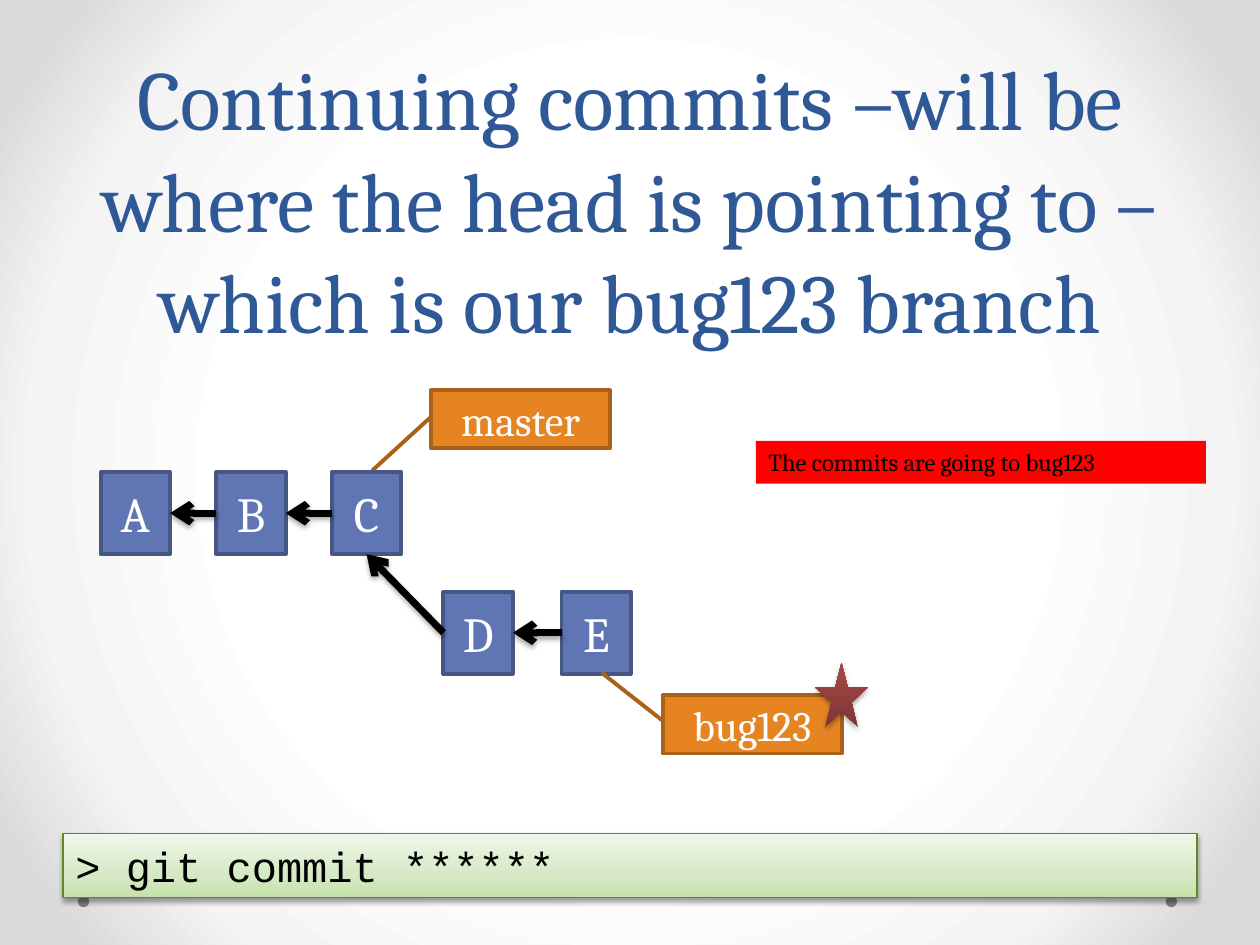
from pptx import Presentation
from pptx.dml.color import RGBColor
from pptx.enum.shapes import MSO_CONNECTOR, MSO_SHAPE
from pptx.enum.text import MSO_ANCHOR, MSO_AUTO_SIZE, PP_ALIGN
from pptx.oxml.ns import qn
from pptx.util import Cm, Pt
from lxml.etree import SubElement

SERIF, MONO = "Cambria", "Courier New"
TOP, LEFT, BOTTOM, RIGHT = range(4)


def rgb(color):
    """Turn a hex string into a colour."""
    return RGBColor.from_string(color)


def write(shape, text, font, size, color, align=PP_ALIGN.CENTER, anchor=MSO_ANCHOR.MIDDLE):
    """Set and format the single paragraph of a shape."""
    frame = shape.text_frame
    frame.text = text
    frame.word_wrap = True
    frame.auto_size = MSO_AUTO_SIZE.NONE
    frame.vertical_anchor = anchor
    paragraph = frame.paragraphs[0]
    paragraph.alignment = align
    face = paragraph.runs[0].font
    face.name, face.size = font, Pt(size)
    face.color.rgb = rgb(color)
    return paragraph


def add_box(slide, kind, box, fill=None, line=None, width=2.25):
    """Add a preset shape with a plain fill and outline."""
    shape = slide.shapes.add_shape(kind, *map(Cm, box))
    shape.shadow.inherit = False
    if fill:
        shape.fill.solid()
        shape.fill.fore_color.rgb = rgb(fill)
    if line:
        shape.line.color.rgb = rgb(line)
        shape.line.width = Pt(width)
    else:
        shape.line.fill.background()
    return shape


def set_gradient(fill, element, stops, circular=False):
    """Fill with a gradient running upwards or out from the centre."""
    fill.gradient()
    gradient = element.find(".//" + qn("a:gradFill"))
    for child in list(gradient):
        gradient.remove(child)
    stop_list = SubElement(gradient, qn("a:gsLst"))
    for percent, color in stops:
        stop = SubElement(stop_list, qn("a:gs"), pos=str(percent * 1000))
        SubElement(stop, qn("a:srgbClr"), val=color)
    if circular:
        spread = SubElement(gradient, qn("a:path"), path="circle")
        SubElement(spread, qn("a:fillToRect"), dict.fromkeys("ltrb", "50000"))
    else:
        SubElement(gradient, qn("a:lin"), ang="16200000", scaled="0")


def add_shadow(shape, distance=1.8, opacity=35):
    """Drop a soft black shadow below a shape or connector."""
    properties = shape._element.spPr
    effects = properties.find(qn("a:effectLst"))
    if effects is None:
        effects = SubElement(properties, qn("a:effectLst"))
    shadow = SubElement(effects, qn("a:outerShdw"), blurRad=str(Pt(3.1)),
                        dist=str(Pt(distance)), dir="5400000", rotWithShape="0")
    black = SubElement(shadow, qn("a:srgbClr"), val="000000")
    SubElement(black, qn("a:alpha"), val=str(opacity * 1000))


def add_commit(slide, name, left, top):
    """Add a commit square."""
    commit = add_box(slide, MSO_SHAPE.RECTANGLE, (left, top, 1.4, 1.65), "6076B4", "475785")
    write(commit, name, SERIF, 28, "FFFFFF")
    return commit


def add_parent_arrow(slide, child, parent, parent_side=RIGHT):
    """Point from the left of a commit to its parent."""
    arrow = slide.shapes.add_connector(MSO_CONNECTOR.STRAIGHT, 0, 0, 0, 0)
    arrow.begin_connect(child, LEFT)
    arrow.end_connect(parent, parent_side)
    arrow.line.color.rgb = rgb("000000")
    arrow.line.width = Pt(4)
    SubElement(arrow.line._get_or_add_ln(), qn("a:tailEnd"), type="arrow")
    add_shadow(arrow)


def add_branch(slide, name, left, top, target):
    """Add a branch label whose callout line ends at target."""
    branch = add_box(slide, MSO_SHAPE.LINE_CALLOUT_1, (left, top, 3.61, 1.17), "E68422", "AA6219")
    for index, value in enumerate((0.446, 0.004, *target)):
        branch.adjustments[index] = value
    write(branch, name, SERIF, 24, "FFFFFF")


def add_title(slide):
    """Place and format the title."""
    title = slide.shapes.title
    title.left, title.top, title.width, title.height = map(Cm, (1.27, 4.01, 22.86, 3.18))
    heading = write(title, "Continuing commits –will be where the head is pointing to –"
                    "which is our bug123 branch", SERIF, 48, "2F5897", anchor=MSO_ANCHOR.BOTTOM)
    heading.line_spacing = Pt(58)


def add_command(slide):
    """Add the command line bar."""
    command = add_box(slide, MSO_SHAPE.RECTANGLE, (1.27, 16.81, 22.86, 1.28),
                      line="62891C", width=0.75)
    set_gradient(command.fill, command._element,
                 [(0, "C5E1AB"), (35, "D6E9C5"), (100, "EFF7E9")])
    add_shadow(command, 1.6, 38)
    write(command, "> git commit ******", MONO, 24, "000000", PP_ALIGN.LEFT, MSO_ANCHOR.TOP)


def add_history(slide):
    """Add the commits, their arrows and the branch labels."""
    add_branch(slide, "master", 8.69, 7.87, (1.383, -0.329))
    a, b, c = [add_commit(slide, name, 2.03 + 2.33 * i, 9.52) for i, name in enumerate("ABC")]
    d, e = [add_commit(slide, name, 8.94 + 2.38 * i, 11.93) for i, name in enumerate("DE")]
    for child, parent in ((b, a), (c, b), (e, d)):
        add_parent_arrow(slide, child, parent)
    add_parent_arrow(slide, d, c, BOTTOM)
    add_branch(slide, "bug123", 13.36, 14.02, (-0.389, -0.34))
    head_star = add_box(slide, MSO_SHAPE.STAR_5_POINT, (16.43, 13.36, 1.07, 1.3))
    set_gradient(head_star.fill, head_star._element,
                 [(0, "7D3535"), (80, "A24545"), (100, "A44343")])
    add_shadow(head_star)


def main():
    """Build the slide and save it."""
    deck = Presentation()
    deck.slide_width, deck.slide_height = Cm(25.4), Cm(19.05)
    slide = deck.slides.add_slide(deck.slide_layouts[5])
    set_gradient(slide.background.fill, slide._element,
                 [(50, "FFFFFF"), (76, "F4F4F4"), (92, "DADADA")], circular=True)
    for left in (23.5, 1.57):
        add_box(slide, MSO_SHAPE.OVAL, (left, 18.06, 0.23, 0.23), "808080")
    add_title(slide)
    add_command(slide)
    add_history(slide)
    remark = add_box(slide, MSO_SHAPE.RECTANGLE, (15.24, 8.89, 9.07, 0.86), "FF0000")
    write(remark, "The commits are going to bug123", SERIF, 14, "000000",
          PP_ALIGN.LEFT, MSO_ANCHOR.TOP)
    deck.save("out.pptx")


if __name__ == "__main__":
    main()
